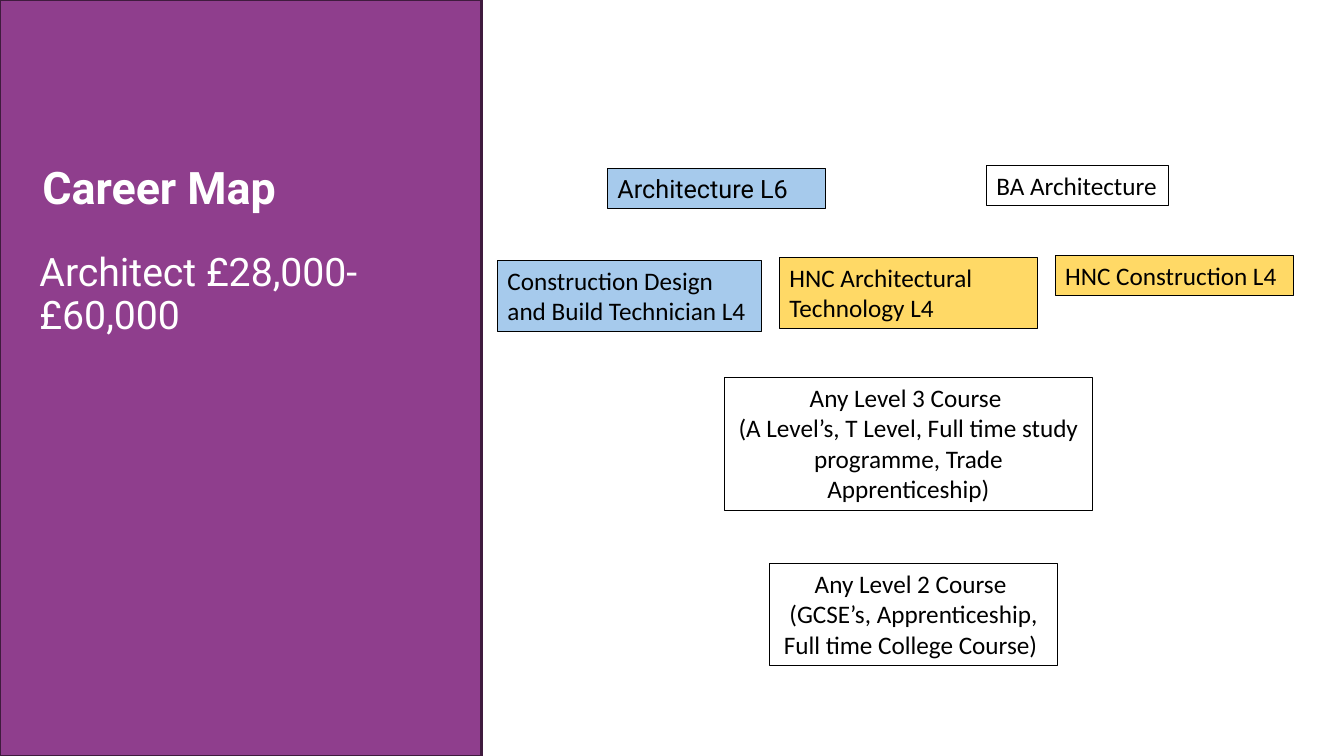
"""Build the architect career map slide."""
from pptx import Presentation
from pptx.dml.color import RGBColor
from pptx.enum import shapes, text
from pptx.oxml import xmlchemy
from pptx.util import Pt

PURPLE, PLUM, WHITE, BLACK = "8F3E8D", "3F1B3E", "FFFFFF", "000000"
BLUE, YELLOW = "A6CAEC", "FFD966"
LEFT, CENTRE = text.PP_ALIGN.LEFT, text.PP_ALIGN.CENTER

SLIDE_SIZE = (960, 540)
PANEL = (0, 0, 344, 540)
TITLE = ("Career Map", (23, 110, 296, 52), 32, True, text.MSO_ANCHOR.MIDDLE)
SALARY = ("Architect £28,000- £60,000", (21, 177, 296, 140), 28, False, text.MSO_ANCHOR.TOP)

LINE_HEIGHT = 22
STEPS = [
    ("BA Architecture", (704.6, 118), 130, 1, None, LEFT, "Calibri"),
    ("Any Level 2 Course \n(GCSE’s, Apprenticeship, Full time College Course) ",
     (549.5, 402.4), 206, 3, None, CENTRE, "Calibri"),
    ("Any Level 3 Course \n(A Level’s, T Level, Full time study programme, Trade Apprenticeship)",
     (517.4, 269.6), 263, 4, None, CENTRE, "Calibri"),
    ("Construction Design and Build Technician L4", (355.4, 186), 188.4, 2, BLUE, LEFT, "Calibri"),
    ("HNC Architectural Technology L4", (556.8, 184), 184.4, 2, YELLOW, LEFT, "Calibri"),
    ("HNC Construction L4", (753.8, 182.2), 170.2, 1, YELLOW, LEFT, "Calibri"),
    ("Architecture L6", (434, 120.2), 155.8, 1, BLUE, LEFT, "Roboto"),
]


def colour(value):
    return RGBColor.from_string(value)


def format_text(frame, size, face, ink, align, bold=False):
    for paragraph in frame.paragraphs:
        paragraph.alignment = align
        for run in paragraph.runs:
            run.font.size, run.font.name, run.font.bold = Pt(size), face, bold
            run.font.color.rgb = colour(ink)


def add_box(slide, bounds, fill, line, weight):
    box = slide.shapes.add_shape(shapes.MSO_SHAPE.RECTANGLE, *map(Pt, bounds))
    box.shadow.inherit = False
    if fill:
        box.fill.solid()
        box.fill.fore_color.rgb = colour(fill)
    else:
        box.fill.background()
    box.line.color.rgb = colour(line)
    box.line.width = Pt(weight)
    return box


def fill_placeholder(holder, content):
    words, bounds, size, bold, anchor = content
    holder.left, holder.top, holder.width, holder.height = map(Pt, bounds)
    frame = holder.text_frame
    frame.text = words
    frame.word_wrap = True
    frame.auto_size = text.MSO_AUTO_SIZE.NONE
    frame.vertical_anchor = anchor
    paragraph = frame.paragraphs[0]
    paragraph.line_spacing = 0.9
    paragraph.space_before = Pt(0)
    properties = paragraph._p.get_or_add_pPr()
    properties.set("marL", "0")
    properties.set("indent", "0")
    properties.append(xmlchemy.OxmlElement("a:buNone"))
    format_text(frame, size, "Roboto", WHITE, LEFT, bold)


def add_step(slide, words, corner, width, lines, fill, align, face):
    height = lines * LINE_HEIGHT + 7
    box = add_box(slide, (*corner, width, height), fill, BLACK, 0.75)
    frame = box.text_frame
    frame.text = words
    frame.word_wrap = True
    frame.auto_size = text.MSO_AUTO_SIZE.SHAPE_TO_FIT_TEXT
    frame.vertical_anchor = text.MSO_ANCHOR.TOP
    format_text(frame, 18, face, BLACK, align)


def main():
    deck = Presentation()
    deck.slide_width, deck.slide_height = map(Pt, SLIDE_SIZE)
    slide = deck.slides.add_slide(deck.slide_layouts[1])
    panel = add_box(slide, PANEL, PURPLE, PLUM, 1.5)
    slide.shapes.title._element.addprevious(panel._element)
    fill_placeholder(slide.shapes.title, TITLE)
    fill_placeholder(slide.placeholders[1], SALARY)
    for step in STEPS:
        add_step(slide, *step)
    deck.save("out.pptx")


if __name__ == "__main__":
    main()
